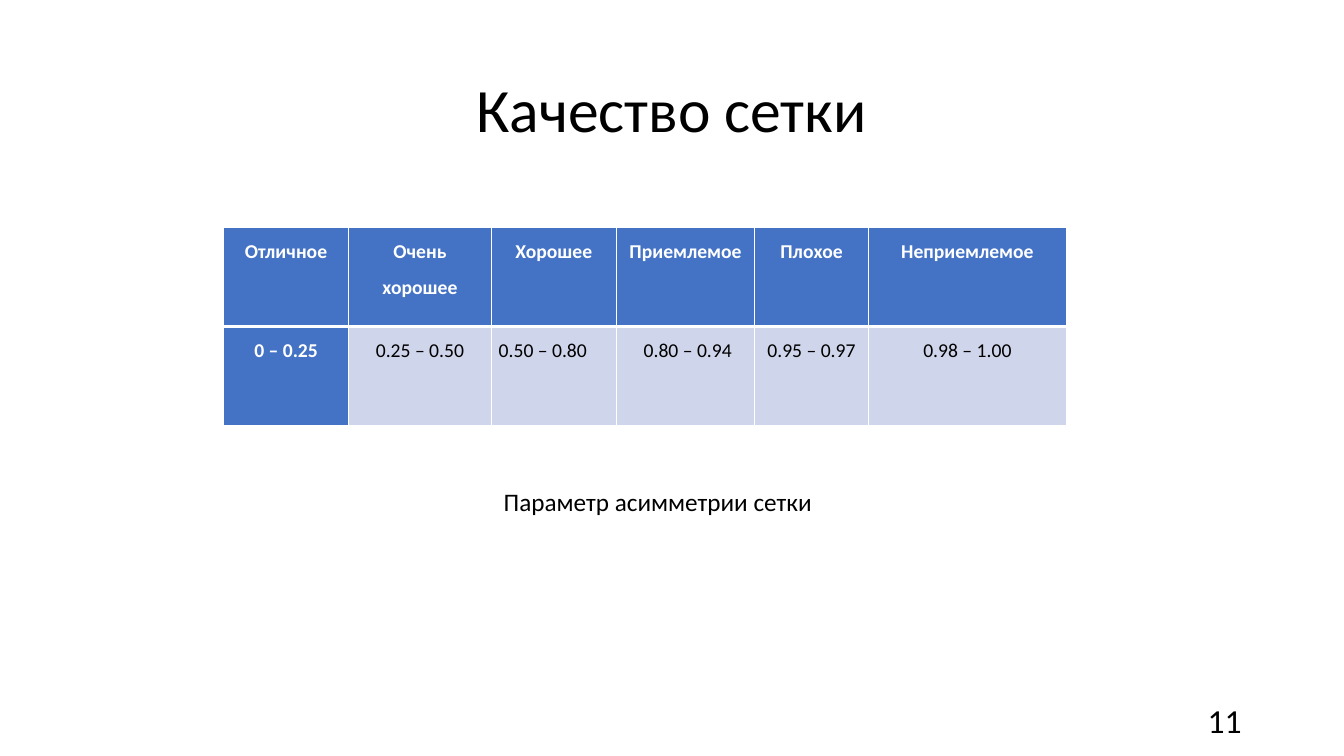
from lxml.etree import SubElement
from pptx import Presentation
from pptx.dml.color import RGBColor
from pptx.enum.text import MSO_ANCHOR, PP_ALIGN
from pptx.oxml.ns import qn
from pptx.util import Pt

# Content
TITLE = "Качество сетки"
GRADES = [
    ("Отличное", "0 – 0.25"),
    ("Очень хорошее", "0.25 – 0.50"),
    ("Хорошее", "0.50 – 0.80"),
    ("Приемлемое", " 0.80 – 0.94"),
    ("Плохое", "0.95 – 0.97"),
    ("Неприемлемое", "0.98 – 1.00"),
]
CAPTION = "Параметр асимметрии сетки"
NUMBER = "11"

# Layout in px, 96 to the inch
TITLE_BOX = (88, 38, 1104, 139)
CAPTION_BOX = (378, 458, 497, 39)
NUMBER_BOX = (904, 667, 288, 38)
LEFT, TOP, ROW = 213, 217, 94
WIDTHS = [119, 136, 119, 132, 108, 189]
INSET = 7

FONT = "Calibri"
BLACK, WHITE, BLUE, PALE = "000000", "FFFFFF", "4472C4", "CFD5EA"


def px(n):
    return n * 9525


def color(code):
    return RGBColor.from_string(code)


def write(frame, text, size, ink=BLACK, bold=False, align=PP_ALIGN.CENTER, gap=None):
    frame.text = text
    frame.word_wrap = True
    para = frame.paragraphs[0]
    para.alignment = align
    para.line_spacing = gap
    font = para.runs[0].font
    font.name, font.size, font.bold = FONT, Pt(size), bold
    font.color.rgb = color(ink)


def edge(cell, sides):
    props = cell._tc.get_or_add_tcPr()
    for side, width in sides.items():
        line = SubElement(props, qn(f"a:ln{side}"), w=str(Pt(width)))
        fill = SubElement(line, qn("a:solidFill"))
        SubElement(fill, qn("a:srgbClr"), val=WHITE)


deck = Presentation()
deck.slide_width, deck.slide_height = px(1280), px(720)
slide = deck.slides.add_slide(deck.slide_layouts[5])

# Title
title = slide.shapes.title
title.left, title.top, title.width, title.height = map(px, TITLE_BOX)
title.text_frame.vertical_anchor = MSO_ANCHOR.MIDDLE
write(title.text_frame, TITLE, 44, gap=0.9)

# Table of grades
area = map(px, (LEFT, TOP, sum(WIDTHS), 2 * ROW))
table = slide.shapes.add_table(2, len(GRADES), *area).table
for row in table.rows:
    row.height = px(ROW)
for c, (grade, width) in enumerate(zip(GRADES, WIDTHS)):
    table.columns[c].width = px(width)
    for r, text in enumerate(grade):
        cell = table.cell(r, c)
        head = r == 0 or c == 0
        cell.margin_left = cell.margin_right = px(INSET)
        cell.margin_top = cell.margin_bottom = 0
        align = PP_ALIGN.LEFT if (r, c) == (1, 2) else PP_ALIGN.CENTER
        write(cell.text_frame, text, 14, WHITE if head else BLACK, head, align, 1.5)
        # Borders come before the fill in the cell properties
        edge(cell, {"L": 1, "R": 1, "T": 3 if r else 1, "B": 1 if r else 3})
        cell.fill.solid()
        cell.fill.fore_color.rgb = color(BLUE if head else PALE)

# Page number and caption
number = slide.shapes.add_textbox(*map(px, NUMBER_BOX)).text_frame
number.vertical_anchor = MSO_ANCHOR.MIDDLE
write(number, NUMBER, 24, align=PP_ALIGN.RIGHT)
caption = slide.shapes.add_textbox(*map(px, CAPTION_BOX)).text_frame
write(caption, CAPTION, 18)

deck.save("out.pptx")
